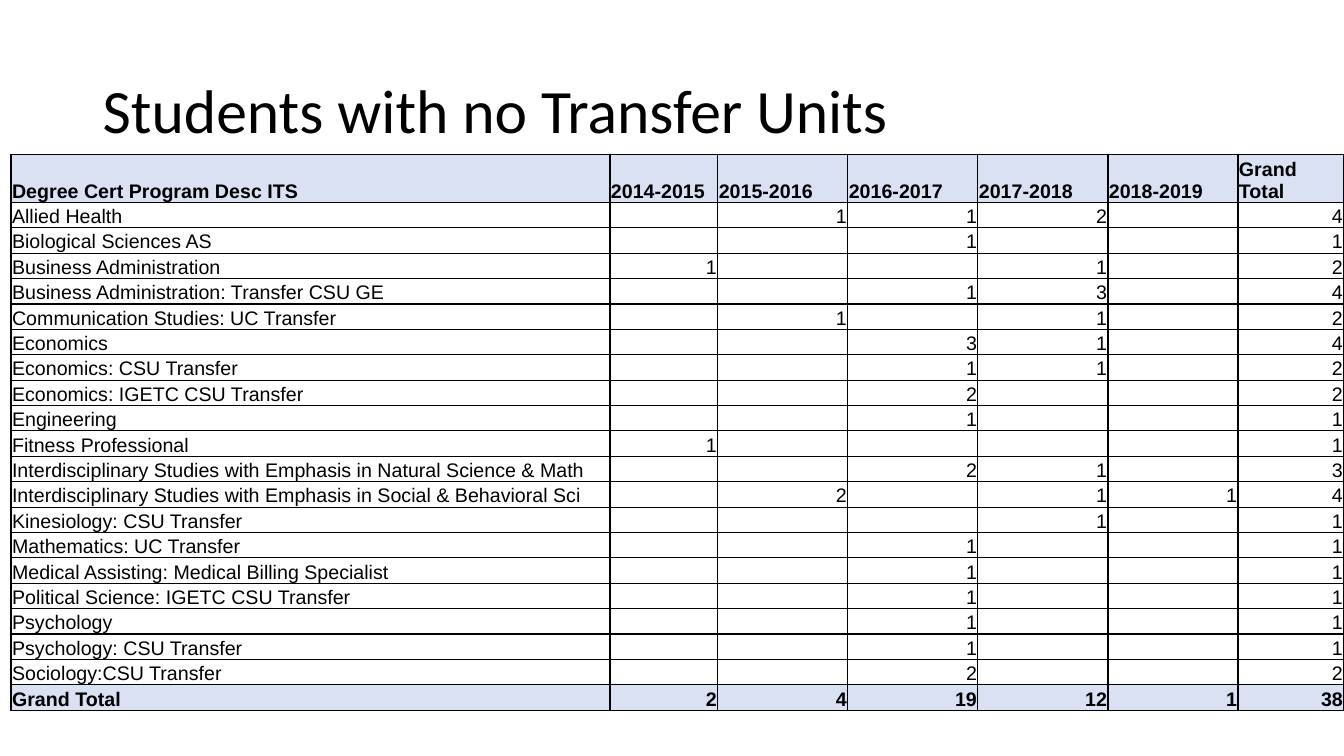
import lxml.etree
import pptx
import pptx.dml.color
import pptx.enum.text
import pptx.oxml.ns
import pptx.util

PX = 9144  # EMU, 100 px to the inch
BLACK, HEADER_BLUE = "000000", "D9E1F2"
ALIGN = pptx.enum.text.PP_ALIGN
ANCHOR = pptx.enum.text.MSO_ANCHOR

YEARS = ["2014-2015", "2015-2016", "2016-2017", "2017-2018", "2018-2019"]
PROGRAMS = [
    ("Allied Health", [0, 1, 1, 2, 0]),
    ("Biological Sciences AS", [0, 0, 1, 0, 0]),
    ("Business Administration", [1, 0, 0, 1, 0]),
    ("Business Administration: Transfer CSU GE", [0, 0, 1, 3, 0]),
    ("Communication Studies: UC Transfer", [0, 1, 0, 1, 0]),
    ("Economics", [0, 0, 3, 1, 0]),
    ("Economics: CSU Transfer", [0, 0, 1, 1, 0]),
    ("Economics: IGETC CSU Transfer", [0, 0, 2, 0, 0]),
    ("Engineering", [0, 0, 1, 0, 0]),
    ("Fitness Professional", [1, 0, 0, 0, 0]),
    ("Interdisciplinary Studies with Emphasis in Natural Science & Math", [0, 0, 2, 1, 0]),
    ("Interdisciplinary Studies with Emphasis in Social & Behavioral Sci", [0, 2, 0, 1, 1]),
    ("Kinesiology: CSU Transfer", [0, 0, 0, 1, 0]),
    ("Mathematics: UC Transfer", [0, 0, 1, 0, 0]),
    ("Medical Assisting: Medical Billing Specialist", [0, 0, 1, 0, 0]),
    ("Political Science: IGETC CSU Transfer", [0, 0, 1, 0, 0]),
    ("Psychology", [0, 0, 1, 0, 0]),
    ("Psychology: CSU Transfer", [0, 0, 1, 0, 0]),
    ("Sociology:CSU Transfer", [0, 0, 2, 0, 0]),
]
COLUMN_WIDTHS = [594, 107, 129, 129, 129, 129, 105]
HEADER_HEIGHT = 45


def color(hex_string):
    return pptx.dml.color.RGBColor.from_string(hex_string)


def apply_format(target, values):
    for name, value in values.items():
        setattr(target, name, value)


def write(paragraph, text, size, font, bold=False):
    run = paragraph.add_run()
    run.text = text
    apply_format(run.font, {"size": pptx.util.Pt(size), "name": font, "bold": bold})
    run.font.color.rgb = color(BLACK)


def add_title(slide, box):
    shape = slide.shapes.add_textbox(*(length * PX for length in box))
    frame = shape.text_frame
    apply_format(frame, {"word_wrap": True, "vertical_anchor": ANCHOR.MIDDLE})
    paragraph = frame.paragraphs[0]
    paragraph.line_spacing = 0.9
    write(paragraph, "Students with no Transfer Units", 44, "Calibri")


def add_borders(cell):
    properties = cell._tc.get_or_add_tcPr()
    qualified = pptx.oxml.ns.qn
    for side in ("a:lnL", "a:lnR", "a:lnT", "a:lnB"):
        line = lxml.etree.SubElement(properties, qualified(side), w="12700")
        fill = lxml.etree.SubElement(line, qualified("a:solidFill"))
        lxml.etree.SubElement(fill, qualified("a:srgbClr"), val=BLACK)


def fill_cell(cell, text, emphasized, align):
    apply_format(cell, {
        "margin_left": PX, "margin_right": PX, "margin_top": PX, "margin_bottom": 0,
        "vertical_anchor": ANCHOR.BOTTOM,
    })
    add_borders(cell)
    if emphasized:
        cell.fill.solid()
        cell.fill.fore_color.rgb = color(HEADER_BLUE)
    else:
        cell.fill.background()
    paragraph = cell.text_frame.paragraphs[0]
    paragraph.alignment = align
    if text:
        write(paragraph, text, 14, "Arial", emphasized)
    else:
        # An empty cell would otherwise stretch its row to 18 pt text.
        lxml.etree.SubElement(paragraph._p, pptx.oxml.ns.qn("a:endParaRPr"), sz="1400")


def table_rows():
    """Header, programs and totals as rows of text."""
    totals = [sum(column) for column in zip(*(counts for _, counts in PROGRAMS))]
    rows = [["Degree Cert Program Desc ITS", *YEARS, "Grand Total"]]
    for label, counts in [*PROGRAMS, ("Grand Total", totals)]:
        rows.append([label, *(str(count or "") for count in counts), str(sum(counts))])
    return rows


def add_program_table(slide, box):
    left, top, width, height = (length * PX for length in box)
    rows = table_rows()
    table = slide.shapes.add_table(
        len(rows), len(COLUMN_WIDTHS), left, top, width, height).table
    apply_format(table, {"first_row": False, "horz_banding": False})
    for column, column_width in zip(table.columns, COLUMN_WIDTHS):
        column.width = column_width * PX
    body_height = (height - HEADER_HEIGHT * PX) // (len(rows) - 1)
    for row_index, texts in enumerate(rows):
        table.rows[row_index].height = body_height if row_index else HEADER_HEIGHT * PX
        emphasized = row_index in (0, len(rows) - 1)
        for column_index, text in enumerate(texts):
            align = ALIGN.RIGHT if row_index and column_index else ALIGN.LEFT
            fill_cell(table.cell(row_index, column_index), text, emphasized, align)


def main():
    presentation = pptx.Presentation()
    apply_format(presentation, {"slide_width": 1333 * PX, "slide_height": 750 * PX})
    slide = presentation.slides.add_slide(presentation.slide_layouts[6])
    add_title(slide, (92, 40, 1150, 145))
    add_program_table(slide, (11, 153, 1322, 549))
    presentation.save("out.pptx")


if __name__ == "__main__":
    main()
